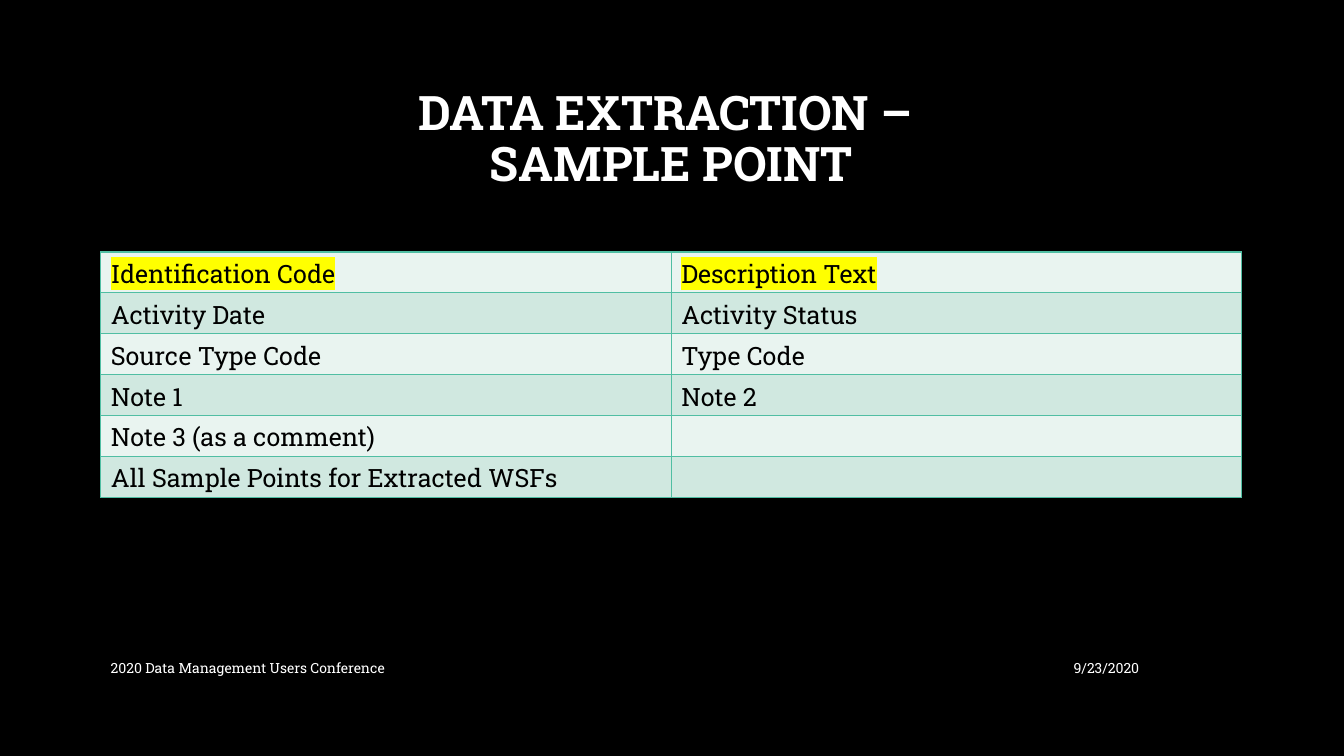
from lxml.etree import SubElement
from pptx import Presentation
from pptx.dml.color import RGBColor
from pptx.enum.text import MSO_ANCHOR, PP_ALIGN
from pptx.oxml import parse_xml
from pptx.oxml.ns import nsdecls, qn
from pptx.util import Pt

FACE = "Roboto Slab"
BLACK, WHITE, YELLOW, GREEN = "000000", "FFFFFF", "FFFF00", "50BEA3"
BANDS = ("E9F4F0", "D0E8E0")
ROWS = [
    ("Identification Code", "Description Text"),
    ("Activity Date", "Activity Status"),
    ("Source Type Code", "Type Code"),
    ("Note 1", "Note 2"),
    ("Note 3 (as a comment)", ""),
    ("All Sample Points for Extracted WSFs", ""),
]


def paint(color, code):
    """Set a colour format from a hex string."""
    color.rgb = RGBColor.from_string(code)


def style(para, size, code, bold=False):
    """Set the font of a whole paragraph."""
    font = para.font
    font.name, font.size, font.bold = FACE, Pt(size), bold
    paint(font.color, code)


def label(slide, box, text, size, align, bold=False):
    """Place white text, centred vertically in its box."""
    frame = slide.shapes.add_textbox(*map(Pt, box)).text_frame
    frame.word_wrap = True
    frame.vertical_anchor = MSO_ANCHOR.MIDDLE
    para = frame.paragraphs[0]
    para.text, para.alignment = text, align
    style(para, size, WHITE, bold)
    return para


def mark(run):
    """Highlight a run in yellow."""
    glow = SubElement(run.font._element, qn("a:highlight"))
    SubElement(glow, qn("a:srgbClr"), val=YELLOW)


def edge(cell):
    """Draw a thin green line on all four sides of a cell."""
    props = cell._tc.get_or_add_tcPr()
    for spot, side in enumerate("LRTB"):
        props.insert(spot, parse_xml(
            f'<a:ln{side} {nsdecls("a")} w="{Pt(1)}"><a:solidFill>'
            f'<a:srgbClr val="{GREEN}"/></a:solidFill></a:ln{side}>'))


def title(slide, box):
    """Place the two-line heading."""
    para = label(slide, box, "DATA EXTRACTION – \vSAMPLE POINT", 34,
                 PP_ALIGN.CENTER, True)
    para.line_spacing = 0.9


def fields(slide, box):
    """Place the banded table of fields, with the first row highlighted."""
    cols = len(ROWS[0])
    table = slide.shapes.add_table(len(ROWS), cols, *map(Pt, box)).table
    table.first_row = table.horz_banding = False
    for i, row in enumerate(ROWS):
        for j, text in enumerate(row):
            cell = table.cell(i, j)
            cell.fill.solid()
            paint(cell.fill.fore_color, BANDS[i % 2])
            edge(cell)
            para = cell.text_frame.paragraphs[0]
            style(para, 18, BLACK)
            if text:
                run = para.add_run()
                run.text = text
                if i == 0:
                    mark(run)


def footer(slide, box):
    """Place the event name at the left and the date at the right."""
    left, top, width, height = box
    label(slide, (left, top, 525.6, height),
          "2020 Data Management Users Conference", 10, PP_ALIGN.LEFT)
    label(slide, (left + width - 216, top, 216, height),
          "9/23/2020", 10, PP_ALIGN.RIGHT)


def main():
    """Build and save the slide."""
    deck = Presentation()
    deck.slide_width, deck.slide_height = Pt(960), Pt(540)
    slide = deck.slides.add_slide(deck.slide_layouts[6])
    fill = slide.background.fill
    fill.solid()
    paint(fill.fore_color, BLACK)
    title(slide, (72, 48, 815, 104.4))
    fields(slide, (72, 180, 815, 175.2))
    footer(slide, (72, 463, 748.8, 28.8))
    deck.save("out.pptx")


if __name__ == "__main__":
    main()
